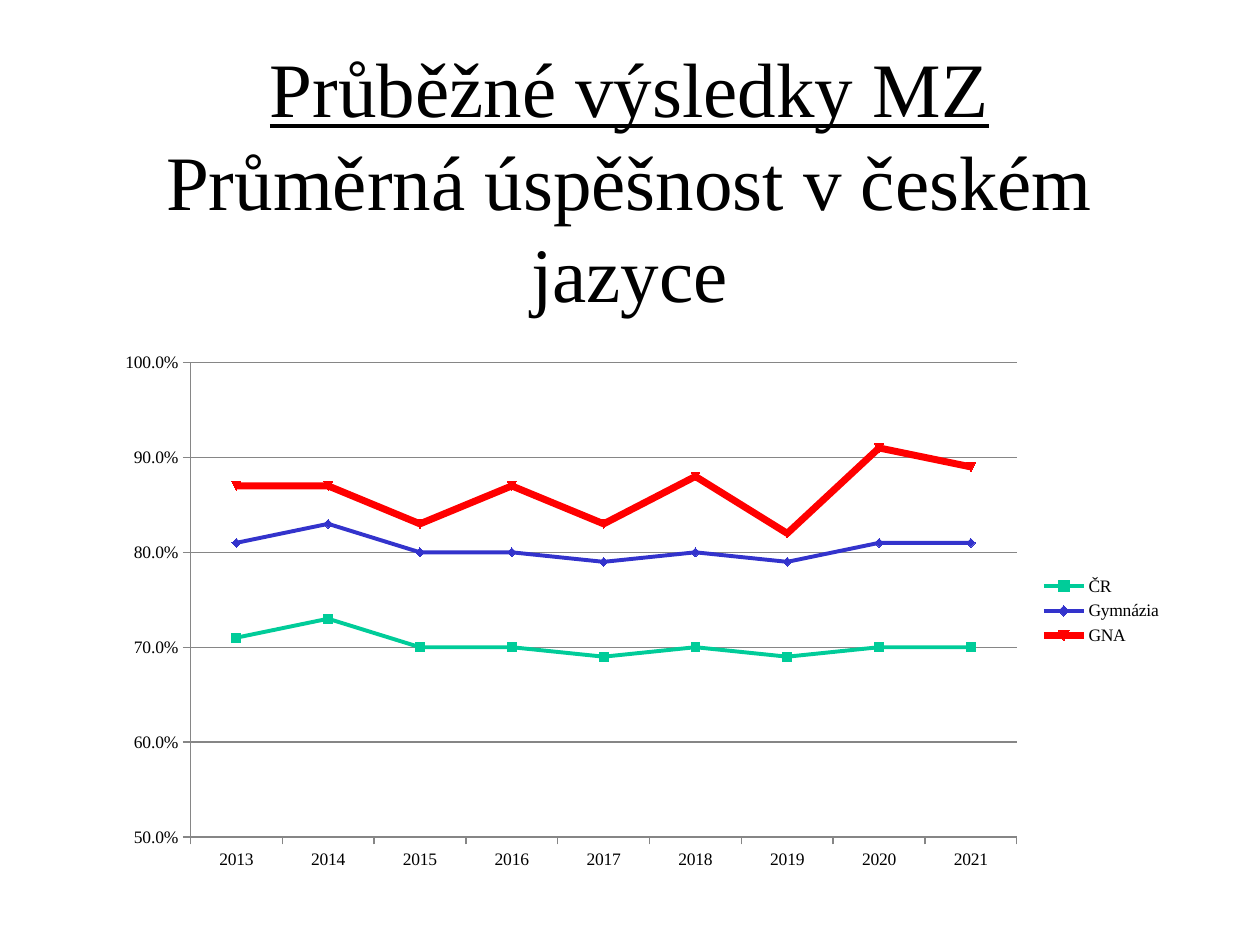
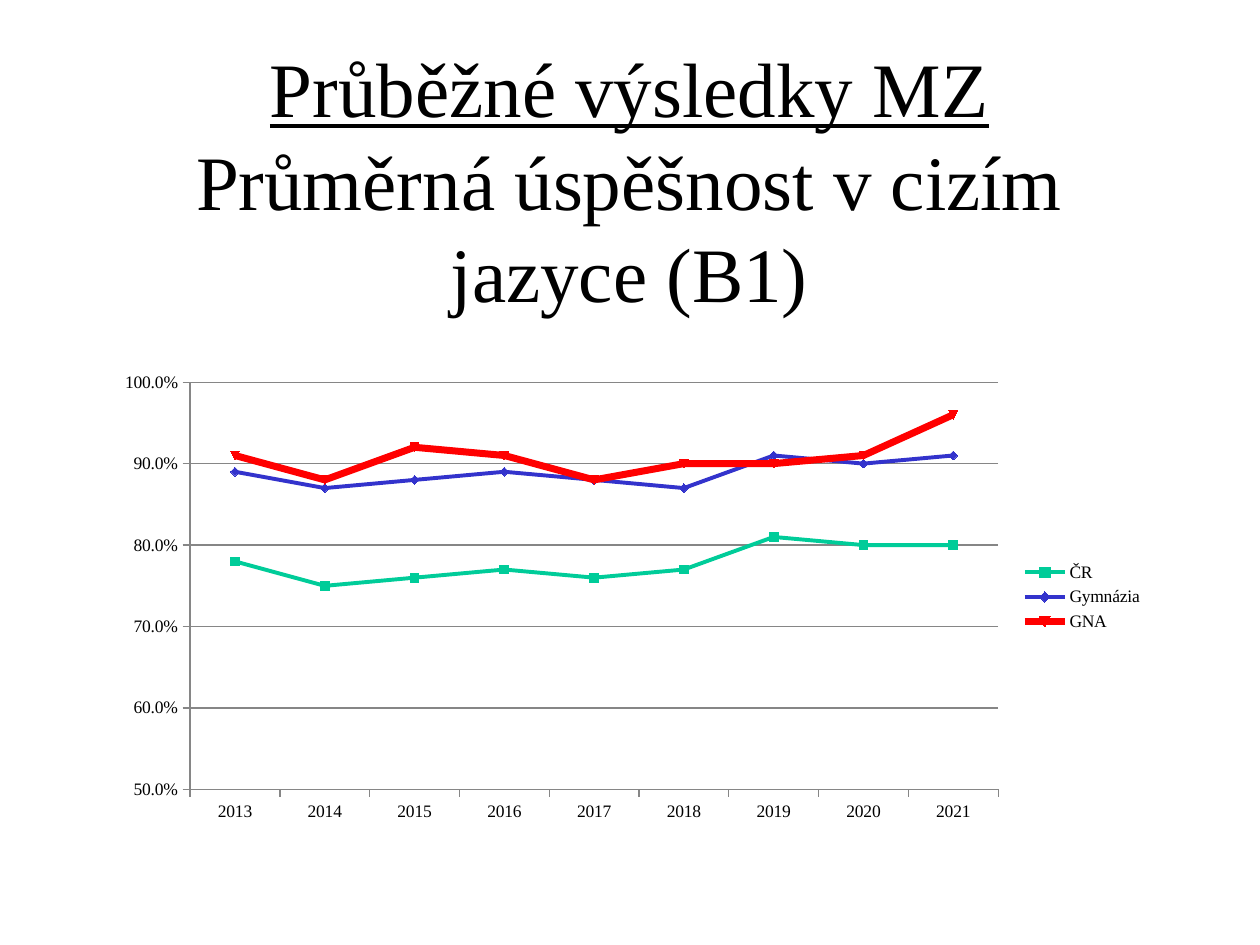
import dataclasses

import pptx
import pptx.chart.data
import pptx.dml.color
import pptx.enum.chart
import pptx.enum.text
import pptx.util

EMU_PER_PX = 914400 / 126


def px(length):
    return pptx.util.Emu(round(length * EMU_PER_PX))


def rgb(code):
    return pptx.dml.color.RGBColor.from_string(code)


# Shared look
@dataclasses.dataclass(frozen=True)
class Theme:
    font: str = "Times New Roman"
    text: str = "000000"
    background: str = "FFFFFF"
    grid: str = "868686"
    title_size: float = 44
    chart_size: float = 10
    hairline: float = 0.75
    marker_size: int = 5


THEME = Theme()
TITLE_BOX = (94, 26, 1071, 307)
HEADING = "Průběžné výsledky MZ"
YEARS = [str(year) for year in range(2013, 2022)]

# Group of schools: line colour and line width in points
GROUPS = {
    "ČR": ("00CC99", 2.25),
    "Gymnázia": ("3333CC", 2.25),
    "GNA": ("FF0000", 4),
}

# Subject, chart box in px, success rates by group
SUBJECTS = [
    ("Průměrná úspěšnost v českém jazyce", (104, 342, 1071, 538), {
        "ČR": [0.71, 0.73, 0.7, 0.7, 0.69, 0.7, 0.69, 0.7, 0.7],
        "Gymnázia": [0.81, 0.83, 0.8, 0.8, 0.79, 0.8, 0.79, 0.81, 0.81],
        "GNA": [0.87, 0.87, 0.83, 0.87, 0.83, 0.88, 0.82, 0.91, 0.89],
    }),
    ("Průměrná úspěšnost v cizím jazyce (B1)", (104, 363, 1052, 468), {
        "ČR": [0.78, 0.75, 0.76, 0.77, 0.76, 0.77, 0.81, 0.8, 0.8],
        "Gymnázia": [0.89, 0.87, 0.88, 0.89, 0.88, 0.87, 0.91, 0.9, 0.91],
        "GNA": [0.91, 0.88, 0.92, 0.91, 0.88, 0.9, 0.9, 0.91, 0.96],
    }),
]


def style_font(font, size):
    font.name = THEME.font
    font.size = pptx.util.Pt(size)
    font.color.rgb = rgb(THEME.text)


def style_line(line, color, width):
    line.color.rgb = rgb(color)
    line.width = pptx.util.Pt(width)


# Title: underlined heading above the subject
def add_title(slide, subject):
    title = slide.shapes.title
    title.left, title.top, title.width, title.height = map(px, TITLE_BOX)
    frame = title.text_frame
    frame.word_wrap = True
    frame.auto_size = pptx.enum.text.MSO_AUTO_SIZE.NONE
    frame.vertical_anchor = pptx.enum.text.MSO_ANCHOR.MIDDLE
    paragraph = frame.paragraphs[0]
    paragraph.alignment = pptx.enum.text.PP_ALIGN.CENTER
    style_font(paragraph.font, THEME.title_size)
    for text, underlined in ((HEADING, True), (subject, False)):
        if not underlined:
            paragraph.add_line_break()
        run = paragraph.add_run()
        run.text = text
        style_font(run.font, THEME.title_size)
        run.font.underline = underlined


def style_axes(chart):
    rates = chart.value_axis
    rates.minimum_scale, rates.maximum_scale = 0.5, 1
    rates.major_unit = 0.1
    rates.has_major_gridlines = True
    style_line(rates.major_gridlines.format.line, THEME.grid, THEME.hairline)
    rates.tick_labels.number_format = "0.0%"
    rates.tick_labels.number_format_is_linked = False
    for axis in (rates, chart.category_axis):
        axis.major_tick_mark = pptx.enum.chart.XL_TICK_MARK.OUTSIDE
        axis.minor_tick_mark = pptx.enum.chart.XL_TICK_MARK.NONE
        style_line(axis.format.line, THEME.grid, THEME.hairline)


def style_series(series):
    color, width = GROUPS[series.name]
    series.smooth = False
    style_line(series.format.line, color, width)
    marker = series.marker
    marker.style = pptx.enum.chart.XL_MARKER_STYLE.AUTOMATIC
    marker.size = THEME.marker_size
    marker.format.fill.solid()
    marker.format.fill.fore_color.rgb = rgb(color)
    marker.format.line.color.rgb = rgb(color)


# Line chart of the success rates over the years
def add_rate_chart(slide, box, rates):
    data = pptx.chart.data.CategoryChartData(number_format="0.0%")
    data.categories = YEARS
    for group in GROUPS:
        data.add_series(group, rates[group])
    chart = slide.shapes.add_chart(
        pptx.enum.chart.XL_CHART_TYPE.LINE_MARKERS, *map(px, box), data
    ).chart
    style_font(chart.font, THEME.chart_size)
    chart.has_title = False
    chart.has_legend = True
    chart.legend.position = pptx.enum.chart.XL_LEGEND_POSITION.RIGHT
    chart.legend.include_in_layout = False
    style_axes(chart)
    chart.plots[0].vary_by_categories = False
    for series in chart.plots[0].series:
        style_series(series)


def main():
    deck = pptx.Presentation()
    deck.slide_width, deck.slide_height = px(1260), px(945)
    title_only = deck.slide_layouts[5]
    background = deck.slide_master.background.fill
    background.solid()
    background.fore_color.rgb = rgb(THEME.background)
    for subject, box, rates in SUBJECTS:
        slide = deck.slides.add_slide(title_only)
        add_title(slide, subject)
        add_rate_chart(slide, box, rates)
    deck.save("out.pptx")


if __name__ == "__main__":
    main()
